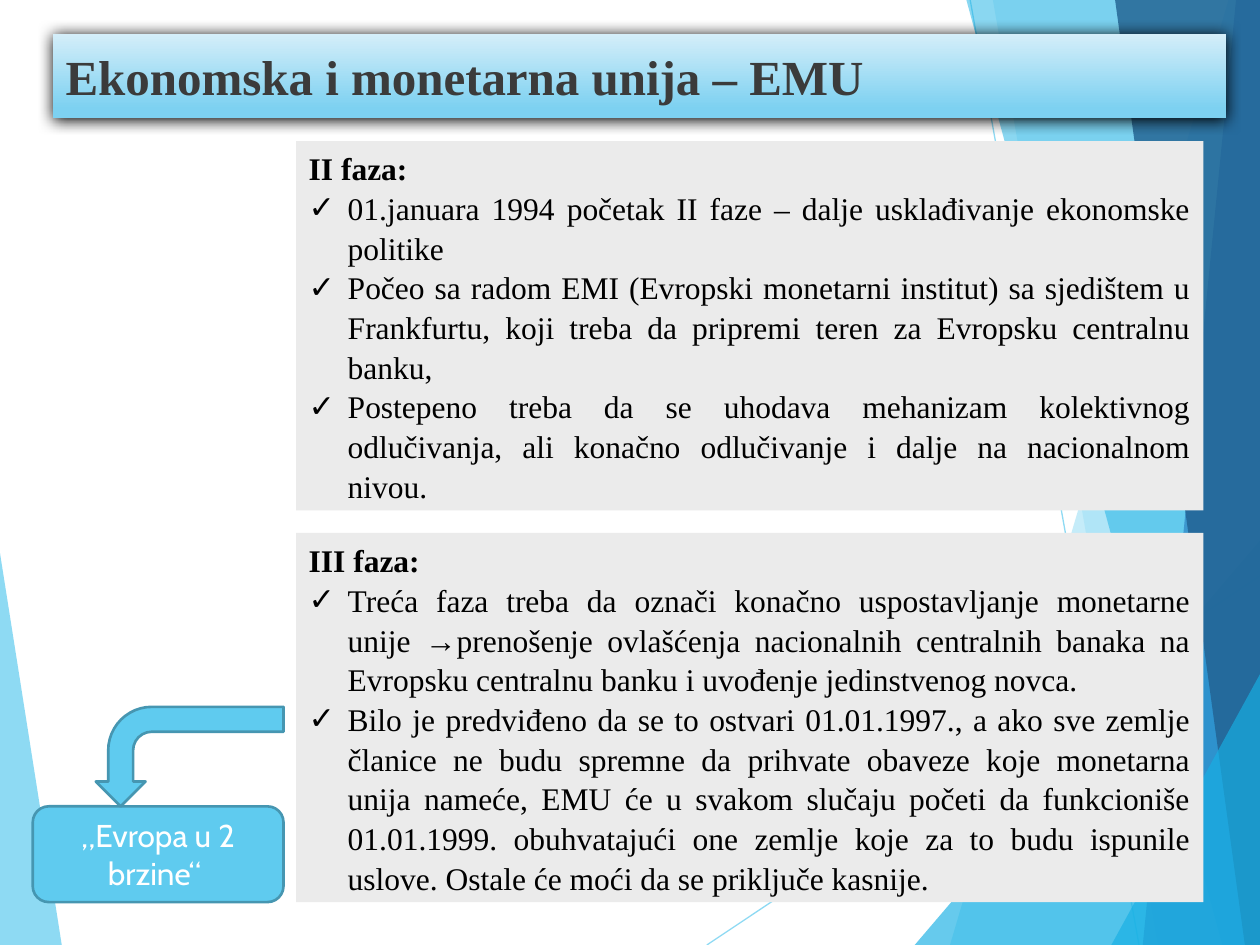
from lxml import etree
from pptx import Presentation
from pptx.dml.color import RGBColor
from pptx.enum.shapes import MSO_CONNECTOR, MSO_SHAPE
from pptx.enum.text import MSO_ANCHOR, MSO_AUTO_SIZE, PP_ALIGN
from pptx.oxml import parse_xml
from pptx.oxml.ns import nsdecls, qn
from pptx.util import Inches, Pt

STRAIGHT = MSO_CONNECTOR.STRAIGHT
ROUNDED = MSO_SHAPE.ROUNDED_RECTANGLE
BENT_ARROW = MSO_SHAPE.BENT_ARROW
MIDDLE, TOP = MSO_ANCHOR.MIDDLE, MSO_ANCHOR.TOP
NO_FIT = MSO_AUTO_SIZE.NONE
LEFT, CENTER, JUSTIFY = PP_ALIGN.LEFT, PP_ALIGN.CENTER, PP_ALIGN.JUSTIFY

SKY = RGBColor(0x5F, 0xCB, 0xEF)
CYAN = RGBColor(0x17, 0xB0, 0xE4)
BLUE = RGBColor(0x2E, 0x83, 0xC3)
NAVY = RGBColor(0x22, 0x62, 0x92)
OUTLINE = RGBColor(0x46, 0x96, 0xB1)
PALE = RGBColor(0xD4, 0xEE, 0xF9)
AQUA = RGBColor(0x7D, 0xD1, 0xF1)
PANEL = RGBColor(0xEB, 0xEB, 0xEB)
DARK = RGBColor(0x3B, 0x3B, 0x3B)
BLACK = RGBColor(0, 0, 0)
WHITE = RGBColor(0xFF, 0xFF, 0xFF)
SERIF, SANS = "Times New Roman", "Cabin"

FACETS = [
    (SKY, 70, [(0, 4.39), (0.49, 7.5), (0, 7.5)]),
    (SKY, 36, [(9.75, 0), (7.54, 7.5), (10, 7.5), (10, 0)]),
    (SKY, 20, [(7.88, 0), (9.19, 7.5), (10, 7.5), (10, 0)]),
    (CYAN, 66, [(7.26, 7.5), (10, 4.29), (10, 7.5)]),
    (CYAN, 50, [(7.67, 0), (9.7, 7.5), (10, 7.5), (10, 0)]),
    (BLUE, 70, [(9.81, 0), (9.07, 7.5), (10, 7.5), (10, 0)]),
    (NAVY, 82, [(8.85, 0), (9.88, 7.5), (10, 7.5), (10, 0)]),
    (CYAN, 66, [(8.82, 7.5), (10, 5.35), (10, 7.5)]),
]
RAYS = [((5.61, 7.5), (10, 4.57)), ((7.7, 0), (9.04, 7.5))]

PHASES = [
    ("II faza:", [
        "01.januara 1994 početak II faze – dalje usklađivanje ekonomske politike ",
        "Počeo sa radom EMI (Evropski monetarni institut) sa sjedištem u Frankfurtu, "
        "koji treba da pripremi teren za Evropsku centralnu banku,",
        "Postepeno treba da se uhodava mehanizam kolektivnog odlučivanja, "
        "ali konačno odlučivanje i dalje na nacionalnom nivou. ",
    ]),
    ("III faza:", [
        "Treća faza treba da označi konačno uspostavljanje monetarne unije "
        "→prenošenje ovlašćenja nacionalnih centralnih banaka na Evropsku "
        "centralnu banku i uvođenje jedinstvenog novca. ",
        "Bilo je predviđeno da se to ostvari 01.01.1997., a ako sve zemlje članice "
        "ne budu spremne da prihvate obaveze koje monetarna unija nameće, EMU će u "
        "svakom slučaju početi da funkcioniše 01.01.1999. obuhvatajući one zemlje "
        "koje za to budu ispunile uslove. Ostale će moći da se priključe kasnije. ",
    ]),
]


def write(para, text, size=18, font=SERIF, color=BLACK, bold=False,
          align=JUSTIFY, spacing=1.0, bullet=None):
    properties = para._p.get_or_add_pPr()
    indent = Inches(0.31) if bullet else 0
    properties.set("marL", str(indent))
    properties.set("indent", str(-indent))
    if bullet:
        etree.SubElement(properties, qn("a:buChar")).set("char", bullet)
    else:
        etree.SubElement(properties, qn("a:buNone"))
    para.alignment = align
    para.line_spacing = spacing
    para.space_before = Pt(0)
    span = para.add_run()
    span.text = text
    span.font.name, span.font.size = font, Pt(size)
    span.font.bold, span.font.color.rgb = bold, color


def set_alpha(fill_parent, percent):
    color = fill_parent.find(".//" + qn("a:srgbClr"))
    etree.SubElement(color, qn("a:alpha")).set("val", str(percent * 1000))


class SlideBuilder:
    def __init__(self, page):
        self.page = page
        self.outline_width = Pt(1.5)

    def facet(self, color, alpha, points):
        corners = [(Inches(x), Inches(y)) for x, y in points]
        builder = self.page.shapes.build_freeform(*corners[0])
        builder.add_line_segments(corners[1:], close=True)
        shape = builder.convert_to_shape()
        shape.shadow.inherit = False
        shape.fill.solid()
        shape.fill.fore_color.rgb = color
        set_alpha(shape.element.spPr, alpha)
        shape.line.fill.background()

    def ray(self, start, end):
        points = [Inches(value) for value in start + end]
        line = self.page.shapes.add_connector(STRAIGHT, *points)
        line.line.color.rgb = SKY
        line.line.width = Pt(0.75)
        properties = line._element.spPr
        set_alpha(properties, 70)
        etree.SubElement(properties, qn("a:effectLst"))

    def place(self, index, left, top, width, height, anchor):
        box = self.page.placeholders[index]
        box.element.getparent().append(box.element)
        box.left, box.top = Inches(left), Inches(top)
        box.width, box.height = Inches(width), Inches(height)
        frame = box.text_frame
        frame.word_wrap, frame.auto_size = True, NO_FIT
        frame.vertical_anchor = anchor
        return box

    def title(self, text):
        box = self.place(0, 0.42, 0.27, 9.31, 0.67, MIDDLE)
        properties = box.element.spPr
        properties.append(parse_xml(
            f'<a:prstGeom {nsdecls("a")} prst="roundRect"><a:avLst/></a:prstGeom>'))
        box.fill.gradient()
        box.fill.gradient_angle = 270
        for stop, position, color in zip(box.fill.gradient_stops, (0, 0.88), (PALE, AQUA)):
            stop.position = position
            stop.color.rgb = color
        properties.append(parse_xml(
            f'<a:effectLst {nsdecls("a")}><a:outerShdw blurRad="{Pt(8.5)}" '
            f'dist="{Pt(1)}" dir="5400000" rotWithShape="0">'
            '<a:srgbClr val="000000"/></a:outerShdw></a:effectLst>'))
        frame = box.text_frame
        frame.margin_left = frame.margin_right = Inches(0.1)
        frame.margin_top = frame.margin_bottom = Inches(0.04)
        write(frame.paragraphs[0], text, size=28, color=DARK, bold=True, align=LEFT)

    def phase(self, index, top, heading, items):
        box = self.place(index, 2.35, top, 7.2, 2.93, TOP)
        box.fill.solid()
        box.fill.fore_color.rgb = PANEL
        frame = box.text_frame
        write(frame.paragraphs[0], heading, bold=True, spacing=1.05)
        for item in items:
            write(frame.add_paragraph(), item, spacing=1.05, bullet="✓")

    def shape(self, kind, left, top, width, height):
        shape = self.page.shapes.add_shape(
            kind, Inches(left), Inches(top), Inches(width), Inches(height))
        shape.shadow.inherit = False
        shape.fill.solid()
        shape.fill.fore_color.rgb = SKY
        shape.line.color.rgb = OUTLINE
        shape.line.width = self.outline_width
        return shape

    def label(self, text, *area):
        frame = self.shape(ROUNDED, *area).text_frame
        frame.word_wrap = True
        frame.vertical_anchor = MIDDLE
        write(frame.paragraphs[0], text, font=SANS, color=WHITE, align=CENTER)

    def turning_arrow(self, *area):
        arrow = self.shape(BENT_ARROW, *area)
        arrow.rotation = 270
        arrow.element.spPr.xfrm.set("flipH", "1")


def main():
    deck = Presentation()
    deck.slide_width, deck.slide_height = Inches(10), Inches(7.5)
    builder = SlideBuilder(deck.slides.add_slide(deck.slide_layouts[3]))
    builder.facet(*FACETS[0])
    for start, end in RAYS:
        builder.ray(start, end)
    for facet in FACETS[1:]:
        builder.facet(*facet)
    builder.title("Ekonomska i monetarna unija – EMU")
    for number, (heading, items) in enumerate(PHASES):
        builder.phase(number + 1, 1.12 + number * 3.11, heading, items)
    builder.label("„Evropa u 2 brzine“ ", 0.26, 6.4, 1.99, 0.76)
    builder.turning_arrow(1.11, 5.26, 0.79, 1.49)
    deck.save("out.pptx")


if __name__ == "__main__":
    main()
